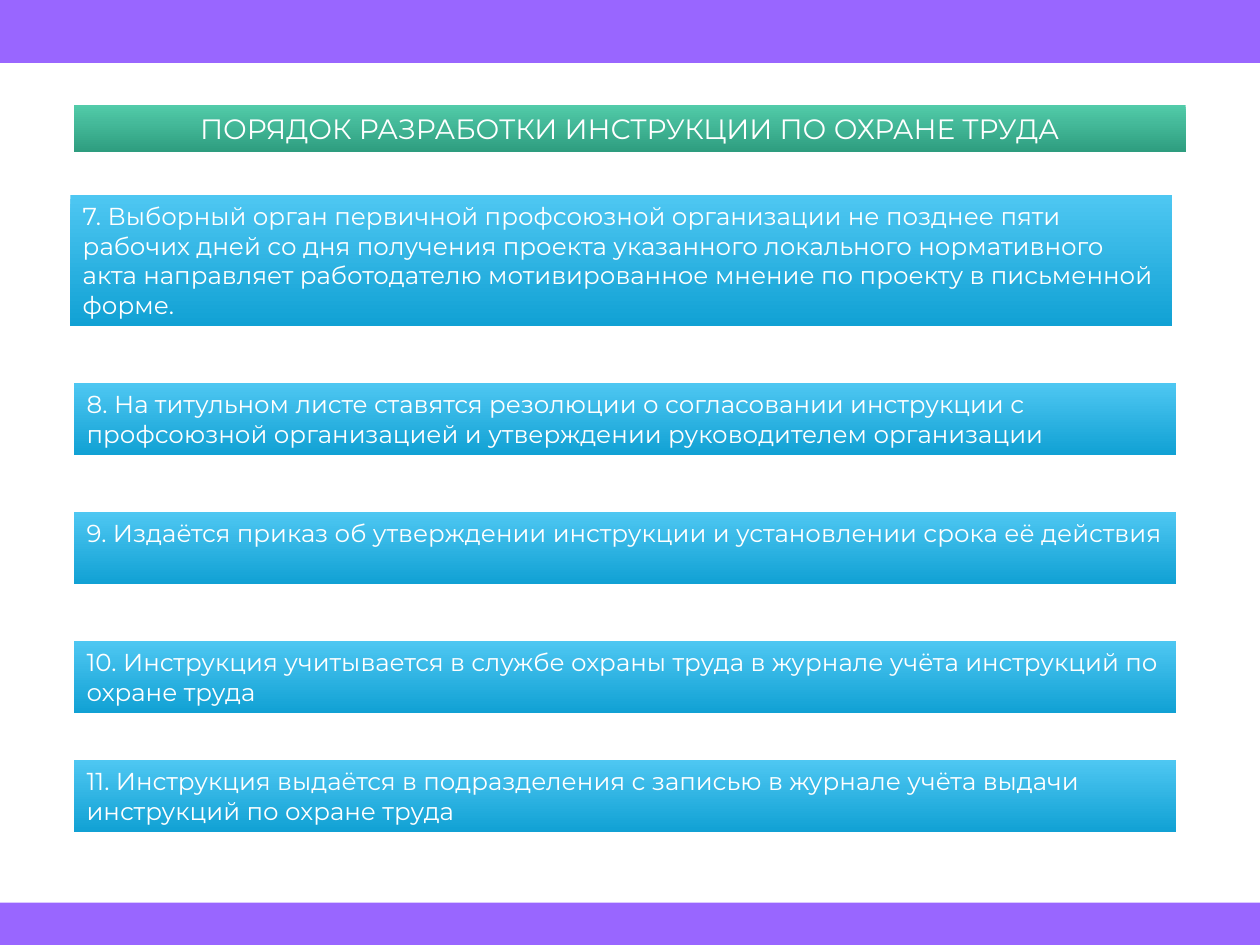
from pptx import Presentation
from pptx.dml.color import RGBColor
from pptx.enum.shapes import MSO_SHAPE as Shape
from pptx.enum.text import MSO_ANCHOR as Anchor, MSO_AUTO_SIZE as AutoSize, PP_ALIGN as Align
from pptx.util import Pt

WIDTH, HEIGHT = 720, 540
FONT = "Montserrat"
WHITE = RGBColor(0xFF, 0xFF, 0xFF)
PURPLE = RGBColor(0x99, 0x66, 0xFF)
GREEN = (RGBColor(0x52, 0xCB, 0xA9), RGBColor(0x2E, 0x9D, 0x7F))
BLUE = (RGBColor(0x4E, 0xC7, 0xF2), RGBColor(0x11, 0xA1, 0xD4))

LEFT, STEP_WIDTH, STEP_HEIGHT = 42.4, 629.5, 41.1

# Left, top, height and text of each step
STEPS = [
    (40.2, 111.5, 74.8,
     "7. Выборный орган первичной профсоюзной организации не позднее пяти рабочих дней "
     "со дня получения проекта указанного локального нормативного акта направляет "
     "работодателю мотивированное мнение по проекту в письменной форме."),
    (LEFT, 218.9, STEP_HEIGHT,
     "8. На титульном листе ставятся резолюции о согласовании инструкции с "
     "профсоюзной организацией и утверждении руководителем организации"),
    (LEFT, 292.6, STEP_HEIGHT,
     "9. Издаётся приказ об утверждении инструкции и установлении срока её действия"),
    (LEFT, 366.3, STEP_HEIGHT,
     "10. Инструкция учитывается в службе охраны труда в журнале учёта инструкций "
     "по охране труда"),
    (LEFT, 434.3, STEP_HEIGHT,
     "11. Инструкция выдаётся в подразделения с записью в журнале учёта выдачи "
     "инструкций по охране труда"),
]


class SlideBuilder:
    def __init__(self, slide, font=FONT, text_color=WHITE):
        self.slide = slide
        self.font = font
        self.text_color = text_color

    def rectangle(self, left, top, width, height):
        shape = self.slide.shapes.add_shape(
            Shape.RECTANGLE, Pt(left), Pt(top), Pt(width), Pt(height))
        shape.shadow.inherit = False
        shape.line.fill.background()
        return shape

    def band(self, top, height):
        shape = self.rectangle(0, top, WIDTH, height)
        shape.fill.solid()
        shape.fill.fore_color.rgb = PURPLE

    def text_bar(self, left, top, width, height, text, colors, size, align=Align.LEFT):
        shape = self.rectangle(left, top, width, height)
        shape.fill.gradient()
        shape.fill.gradient_angle = 270
        for stop, color in zip(shape.fill.gradient_stops, colors):
            stop.color.rgb = color

        frame = shape.text_frame
        frame.text = text
        frame.word_wrap = True
        frame.auto_size = AutoSize.SHAPE_TO_FIT_TEXT
        frame.vertical_anchor = Anchor.TOP
        paragraph = frame.paragraphs[0]
        paragraph.alignment = align
        font = paragraph.runs[0].font
        font.name = self.font
        font.size = Pt(size)
        font.color.rgb = self.text_color


def main():
    presentation = Presentation()
    presentation.slide_width, presentation.slide_height = Pt(WIDTH), Pt(HEIGHT)
    builder = SlideBuilder(presentation.slides.add_slide(presentation.slide_layouts[6]))

    # Bands at the top and bottom edges
    builder.band(0, 36)
    builder.band(515.8, HEIGHT - 515.8)

    # Title
    builder.text_bar(LEFT, 60.2, 635.2, 26.6,
                     "ПОРЯДОК РАЗРАБОТКИ ИНСТРУКЦИИ ПО ОХРАНЕ ТРУДА",
                     GREEN, 16, Align.CENTER)

    # Steps
    for left, top, height, text in STEPS:
        builder.text_bar(left, top, STEP_WIDTH, height, text, BLUE, 14)

    presentation.save("out.pptx")


if __name__ == "__main__":
    main()
